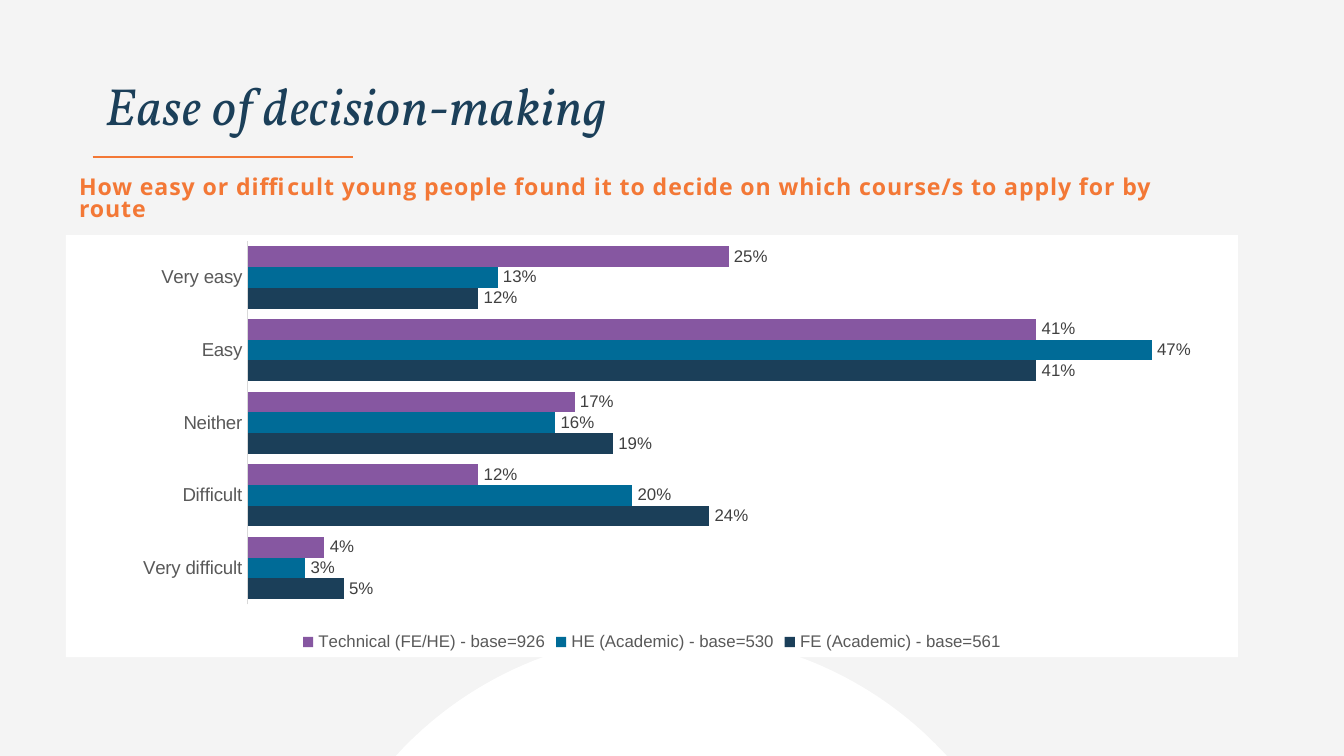
from lxml.etree import SubElement
from pptx import Presentation
from pptx.chart.data import CategoryChartData
from pptx.dml.color import RGBColor
from pptx.enum.chart import XL_CHART_TYPE, XL_LABEL_POSITION, XL_LEGEND_POSITION, XL_TICK_MARK
from pptx.enum.shapes import MSO_CONNECTOR, MSO_SHAPE
from pptx.enum.text import MSO_ANCHOR
from pptx.oxml import parse_xml
from pptx.oxml.ns import nsdecls, qn
from pptx.util import Inches, Pt

COLORS = {
    "background": "F4F4F4",
    "white": "FFFFFF",
    "navy": "1B3F59",
    "blue": "006B97",
    "purple": "8657A1",
    "orange": "F37836",
    "axis_line": "D9D9D9",
    "axis_text": "595959",
    "label_text": "404040",
}

CATEGORIES = ["Very difficult", "Difficult", "Neither", "Easy", "Very easy"]
SERIES = [
    ("FE (Academic) - base=561", [0.05, 0.24, 0.19, 0.41, 0.12], "navy"),
    ("HE (Academic) - base=530", [0.03, 0.20, 0.16, 0.47, 0.13], "blue"),
    ("Technical (FE/HE) - base=926", [0.04, 0.12, 0.17, 0.41, 0.25], "purple"),
]


def rgb(name):
    return RGBColor.from_string(COLORS[name])


def set_font(font, size, color, name="Arial", bold=False, italic=False):
    font.size = Pt(size)
    font.name = name
    font.bold = bold
    font.italic = italic
    font.color.rgb = rgb(color)


def add_text(slide, box, text, anchor, line_spacing, letter_spacing=0.5, **font_format):
    shape = slide.shapes.add_textbox(*map(Inches, box))
    frame = shape.text_frame
    frame.word_wrap = True
    frame.vertical_anchor = anchor
    paragraph = frame.paragraphs[0]
    paragraph.line_spacing = line_spacing
    run = paragraph.add_run()
    run.text = text
    set_font(run.font, **font_format)
    run._r.get_or_add_rPr().set("spc", str(int(letter_spacing * 100)))


def add_backdrop(slide, left, top, diameter):
    """Fill the background and place the large circle that rises from the bottom edge."""
    slide.background.fill.solid()
    slide.background.fill.fore_color.rgb = rgb("background")
    circle = slide.shapes.add_shape(
        MSO_SHAPE.OVAL, Inches(left), Inches(top), Inches(diameter), Inches(diameter))
    circle.shadow.inherit = False
    circle.fill.solid()
    circle.fill.fore_color.rgb = rgb("white")
    circle.line.fill.background()


def add_heading(slide, left, top, width, height):
    """Place the title with its short rule just below the box."""
    add_text(slide, (left, top, width, height), "Ease of decision-making",
             MSO_ANCHOR.BOTTOM, 0.9, size=28, color="navy", name="Vollkorn", italic=True)
    rule_y = Inches(top + height + 0.1)
    rule = slide.shapes.add_connector(
        MSO_CONNECTOR.STRAIGHT, Inches(left), rule_y, Inches(left + 1.94), rule_y)
    rule.line.color.rgb = rgb("orange")
    rule.line.width = Pt(1.25)
    SubElement(rule._element.spPr, qn("a:effectLst"))


def add_subtitle(slide, left, top, width, height):
    add_text(slide, (left, top, width, height),
             "How easy or difficult young people found it to decide on "
             "which course/s to apply for by route",
             MSO_ANCHOR.MIDDLE, 0.8, size=12.4, color="orange", name="Open Sans", bold=True)


def set_plot_layout(chart, x, y, width, height):
    """Fix the inner plot area, in fractions of the chart."""
    plot_area = chart.element.find(".//" + qn("c:plotArea"))
    for layout in plot_area.findall(qn("c:layout")):
        plot_area.remove(layout)
    plot_area.insert(0, parse_xml(
        f'<c:layout {nsdecls("c")}><c:manualLayout><c:layoutTarget val="inner"/>'
        '<c:xMode val="edge"/><c:yMode val="edge"/>'
        f'<c:x val="{x}"/><c:y val="{y}"/><c:w val="{width}"/><c:h val="{height}"/>'
        '</c:manualLayout></c:layout>'))


def set_chart_fill(chart, color):
    chart.element.find(qn("c:chart")).addnext(parse_xml(
        f'<c:spPr {nsdecls("c", "a")}><a:solidFill><a:srgbClr val="{COLORS[color]}"/>'
        '</a:solidFill><a:ln><a:noFill/></a:ln></c:spPr>'))


def add_ease_chart(slide, left, top, width, height):
    data = CategoryChartData(number_format="0%")
    data.categories = CATEGORIES
    for name, values, _ in SERIES:
        data.add_series(name, values)
    chart = slide.shapes.add_chart(
        XL_CHART_TYPE.BAR_CLUSTERED, Inches(left), Inches(top),
        Inches(width), Inches(height), data).chart
    chart.has_title = False
    chart.font.size = Pt(10)
    chart.font.name = "Open Sans"
    set_chart_fill(chart, "white")
    set_plot_layout(chart, 0.155, 0.014, 0.821, 0.861)

    category_axis = chart.category_axis
    category_axis.major_tick_mark = XL_TICK_MARK.NONE
    category_axis.format.line.color.rgb = rgb("axis_line")
    category_axis.format.line.width = Pt(0.75)
    set_font(category_axis.tick_labels.font, 10, "axis_text")

    value_axis = chart.value_axis
    value_axis.minimum_scale = 0
    value_axis.maximum_scale = 0.5
    value_axis.has_major_gridlines = False
    value_axis.visible = False

    chart.has_legend = True
    chart.legend.position = XL_LEGEND_POSITION.BOTTOM
    chart.legend.include_in_layout = False
    set_font(chart.legend.font, 9, "axis_text")

    plot = chart.plots[0]
    plot.gap_width = 50
    plot.overlap = 0
    plot.vary_by_categories = False
    for series, (_, _, color) in zip(plot.series, SERIES):
        series.format.fill.solid()
        series.format.fill.fore_color.rgb = rgb(color)
        labels = series.data_labels
        labels.show_value = True
        labels.position = XL_LABEL_POSITION.OUTSIDE_END
        labels.number_format = "0%"
        labels.number_format_is_linked = False
        set_font(labels.font, 9, "label_text")


def main():
    presentation = Presentation()
    presentation.slide_width = Inches(10)
    presentation.slide_height = presentation.slide_width * 9 // 16
    slide = presentation.slides.add_slide(presentation.slide_layouts[6])
    add_backdrop(slide, 2.22, 4.72, 5.55)
    add_heading(slide, 0.69, 0.06, 8.62, 1.01)
    add_ease_chart(slide, 0.49, 1.75, 8.72, 3.14)
    add_subtitle(slide, 0.49, 1.3, 8.74, 0.38)
    presentation.save("out.pptx")


if __name__ == "__main__":
    main()
